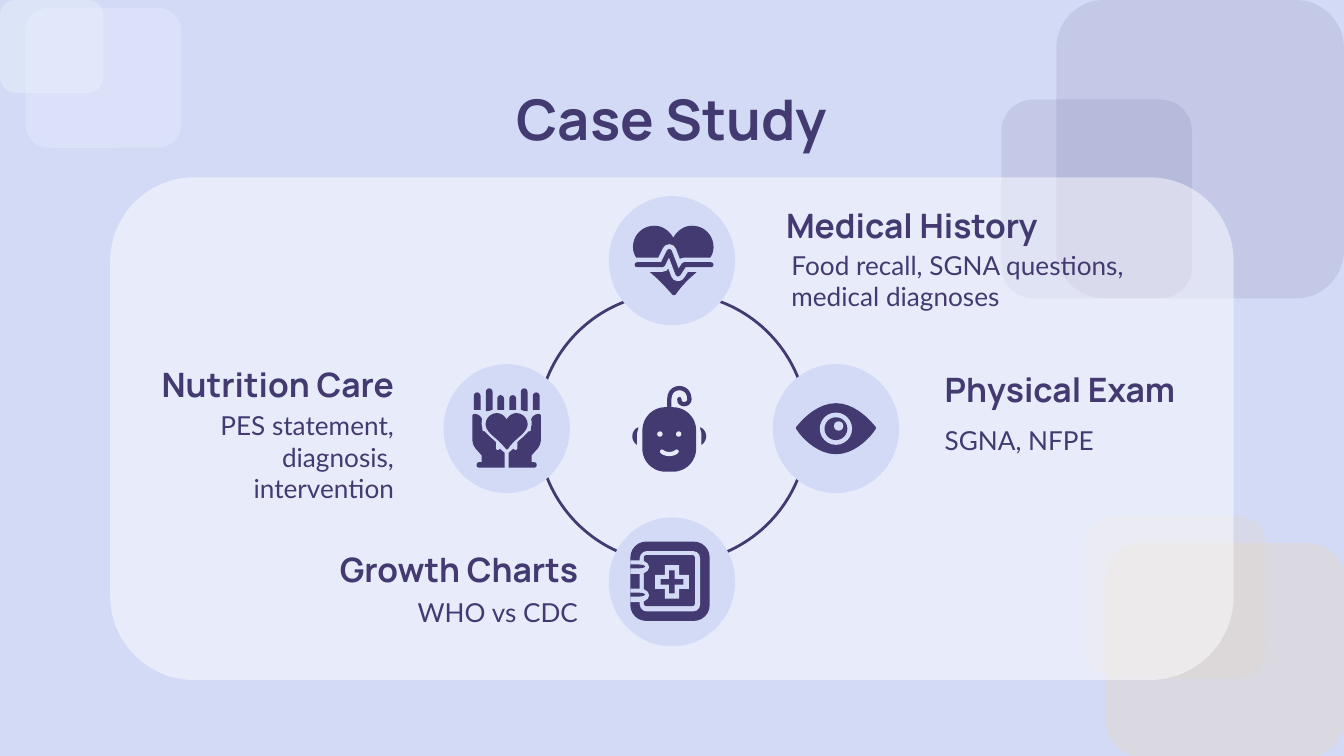
from lxml.etree import SubElement
from pptx import Presentation
from pptx.dml.color import RGBColor
from pptx.enum.shapes import MSO_SHAPE
from pptx.enum.text import MSO_ANCHOR, PP_ALIGN
from pptx.oxml.ns import qn
from pptx.util import Inches, Pt

PURPLE = RGBColor(0x42, 0x3A, 0x70)
PERIWINKLE = RGBColor(0xD3, 0xDA, 0xF6)
ICE = RGBColor(0xE8, 0xF0, 0xFC)
SAND = RGBColor(0xE4, 0xD7, 0xC2)
WHITE = RGBColor(0xFF, 0xFF, 0xFF)
PANEL_TINT = RGBColor(0xE8, 0xEB, 0xFA)


def add_filled(shapes, preset, left, top, width, height, color, opacity=100, corner=None):
    shape = shapes.add_shape(preset, Inches(left), Inches(top), Inches(width), Inches(height))
    shape.shadow.inherit = False
    shape.fill.solid()
    shape.fill.fore_color.rgb = color
    shape.line.fill.background()
    if corner is not None:
        shape.adjustments[0] = corner
    if opacity < 100:
        clr = shape.fill._xPr.find(qn("a:solidFill"))[0]
        SubElement(clr, qn("a:alpha"), val=str(opacity * 1000))
    return shape


def flatten(steps, parts=10):
    """Turn (x, y) lines and (x1, y1, x2, y2, x, y) curves into points."""
    points = [steps[0]]
    for step in steps[1:]:
        if len(step) == 2:
            points.append(step)
            continue
        p0, p1, p2, p3 = points[-1], step[:2], step[2:4], step[4:]
        for i in range(1, parts + 1):
            t = i / parts
            u = 1 - t
            points.append(tuple(u**3 * a + 3 * u * u * t * b + 3 * u * t * t * c + t**3 * d
                                for a, b, c, d in zip(p0, p1, p2, p3)))
    return points


def add_path(shapes, cx, cy, steps, color, stroke=None, scale=1, side=1):
    """Draw steps, in hundredths of an inch from the centre, filled or as a stroke."""
    points = [(Inches(cx + side * scale * x / 100), Inches(cy + scale * y / 100))
              for x, y in flatten(steps)]
    builder = shapes.build_freeform(*points[0])
    builder.add_line_segments(points[1:], close=stroke is None)
    shape = builder.convert_to_shape()
    shape.shadow.inherit = False
    if stroke is None:
        shape.fill.solid()
        shape.fill.fore_color.rgb = color
        shape.line.fill.background()
    else:
        shape.fill.background()
        shape.line.color.rgb = color
        shape.line.width = Pt(stroke)
        outline = shape.line._get_or_add_ln()
        outline.set("cap", "rnd")
        SubElement(outline, qn("a:round"))


def add_heart(shapes, cx, cy, color=PURPLE, scale=1):
    add_path(shapes, cx, cy, [
        (0, -17), (-2, -21, -7, -26, -14, -26), (-23, -26, -30, -19, -30, -10),
        (-30, -4, -26, 1, -18, 8), (-11, 14, -6, 19, -1, 25), (0, 26, 1, 26, 2, 25),
        (6, 19, 11, 14, 18, 8), (26, 1, 30, -4, 30, -10),
        (30, -19, 23, -26, 14, -26), (7, -26, 2, -21, 0, -17)], color, scale=scale)


def draw_heartbeat(shapes, cx, cy):
    add_heart(shapes, cx + 0.01, cy)
    pulse = [(-26, 3), (-7, 3), (-2, -7), (4.5, 10), (9, 3), (29, 3)]
    add_path(shapes, cx, cy, pulse, PERIWINKLE, stroke=7.6)
    add_path(shapes, cx, cy, pulse, PURPLE, stroke=2.7)


def draw_eye(shapes, cx, cy):
    add_path(shapes, cx, cy, [
        (0, -19), (16, -19, 28, -3, 29, -2), (30, -1, 30, 0, 29, 1),
        (28, 3, 16, 19, 0, 19), (-16, 19, -28, 3, -29, 1),
        (-30, 0, -30, -1, -29, -2), (-28, -3, -16, -19, 0, -19)], PURPLE)
    for dx, dy, size, color in [(0, 0, 0.24, PERIWINKLE), (0, 0, 0.17, PURPLE),
                                (0.02, -0.02, 0.07, PERIWINKLE)]:
        add_filled(shapes, MSO_SHAPE.OVAL, cx + dx - size / 2, cy + dy - size / 2,
                   size, size, color)


def draw_caring_hands(shapes, cx, cy):
    hand = [(-24.5, -11), (-21, -11, -18, -9, -18, -5), (-18, 1), (-18, 2, -17, 2, -16, 2),
            (-11, 3, -8, 7, -8, 11), (-8, 15), (-7, 16.5, -6, 16, -5, 15), (-1.5, 18),
            (-1.5, 29), (-20.5, 29), (-23, 29, -23, 25, -20.5, 25), (-18.5, 25),
            (-18.5, 20), (-22, 16), (-25, 13, -25.5, 10, -25.5, 7), (-25.5, -10)]
    for side in (1, -1):
        add_path(shapes, cx, cy, hand, PURPLE, side=side)
        for offset, top, height in [(0.22, -0.27, 0.13), (0.13, -0.3, 0.17),
                                    (0.045, -0.25, 0.11)]:
            add_filled(shapes, MSO_SHAPE.ROUND_2_SAME_RECTANGLE, cx - side * offset - 0.025,
                       cy + top, 0.05, height, PURPLE, corner=0.5)
    add_heart(shapes, cx, cy + 0.02, PERIWINKLE, scale=0.62)
    add_heart(shapes, cx, cy + 0.02, scale=0.52)


def draw_health_book(shapes, cx, cy):
    left, top = cx - 0.31, cy - 0.3
    for inset, size, color, corner in [(0, 0.59, PURPLE, 0.2), (0.07, 0.45, PERIWINKLE, 0.12),
                                       (0.1, 0.38, PURPLE, 0.05)]:
        add_filled(shapes, MSO_SHAPE.ROUNDED_RECTANGLE, left + inset, top + inset,
                   size, size, color, corner=corner)
    for clasp in (0.14, 0.35):
        add_filled(shapes, MSO_SHAPE.FLOWCHART_DELAY, left, top + clasp, 0.14, 0.1, PERIWINKLE)
        add_filled(shapes, MSO_SHAPE.FLOWCHART_DELAY, left, top + clasp + 0.03, 0.11, 0.03, PURPLE)
    for size, color, corner in [(0.25, PERIWINKLE, 0.29), (0.17, PURPLE, 0.38)]:
        add_filled(shapes, MSO_SHAPE.CROSS, cx - size / 2, cy - size / 2,
                   size, size, color, corner=corner)


def draw_baby(shapes, cx, cy):
    add_filled(shapes, MSO_SHAPE.ROUNDED_RECTANGLE, cx - 0.2, cy - 0.16, 0.4, 0.48,
               PURPLE, corner=0.43)
    add_path(shapes, cx, cy, [
        (0, -14), (0, -22), (0, -33, 15, -33, 15, -22), (15, -17, 7, -17, 7.5, -22)],
        PURPLE, stroke=2.3)
    for side in (1, -1):
        add_path(shapes, cx, cy, [
            (-23, -1), (-26, 0, -27.5, 3, -27.5, 6), (-27.5, 8, -26, 11, -24, 12),
            (-24, 4), (-24, 2, -23, 1, -23, -1)], PURPLE, side=side)
        add_filled(shapes, MSO_SHAPE.OVAL, cx + side * 0.07 - 0.02, cy + 0.02, 0.04, 0.04,
                   PANEL_TINT)
    add_path(shapes, cx, cy, [(-5.5, 17), (-3, 19.5, 3, 19.5, 5.5, 17)], PANEL_TINT, stroke=2.2)


def add_text(shapes, left, top, width, height, lines, font, size, align, anchor, bold=False):
    frame = shapes.add_textbox(Inches(left), Inches(top), Inches(width), Inches(height)).text_frame
    frame.word_wrap = True
    frame.vertical_anchor = anchor
    frame.margin_left = frame.margin_right = Inches(0.1)
    frame.margin_top = frame.margin_bottom = Inches(0.1)
    frame.text = lines
    for paragraph in frame.paragraphs:
        paragraph.alignment = align
        paragraph.font.name = font
        paragraph.font.size = Pt(size)
        paragraph.font.bold = bold
        paragraph.font.color.rgb = PURPLE


def add_topic(shapes, heading, heading_box, detail, detail_box, align):
    add_text(shapes, *heading_box, heading, "Manrope", 18, align, MSO_ANCHOR.MIDDLE, bold=True)
    add_text(shapes, *detail_box, detail, "Lato", 14, align, MSO_ANCHOR.BOTTOM)


def add_backdrop(shapes):
    for *box, color, opacity in [
            (0, 0, 0.77, 0.69, ICE, 47), (0.19, 0.06, 1.16, 1.04, ICE, 35),
            (7.86, 0, 2.14, 2.22, PURPLE, 10), (7.45, 0.74, 1.42, 1.48, PURPLE, 10),
            (8.23, 4.04, 1.77, 1.59, SAND, 42), (8.08, 3.84, 1.34, 1.2, SAND, 24),
            (0.82, 1.32, 8.36, 3.74, WHITE, 49)]:
        add_filled(shapes, MSO_SHAPE.ROUNDED_RECTANGLE, *box, color, opacity, corner=0.167)


def add_cycle(shapes, cx, cy):
    """Draw the ring around the baby with an icon disc on each side."""
    ring = add_filled(shapes, MSO_SHAPE.OVAL, cx - 1, cy - 1.01, 2.01, 2.01, PURPLE)
    ring.fill.background()
    ring.line.color.rgb = PURPLE
    ring.line.width = Pt(1.5)
    for dx, dy, draw_icon in [(0, -1.25, draw_heartbeat), (1.22, 0, draw_eye),
                              (0, 1.14, draw_health_book), (-1.23, 0, draw_caring_hands)]:
        x, y = cx + dx, cy + dy
        add_filled(shapes, MSO_SHAPE.OVAL, x - 0.47, y - 0.48, 0.94, 0.96, PERIWINKLE)
        draw_icon(shapes, x, y)
    draw_baby(shapes, cx - 0.02, cy)


def build_case_study(slide):
    slide.background.fill.solid()
    slide.background.fill.fore_color.rgb = PERIWINKLE
    shapes = slide.shapes
    add_backdrop(shapes)
    add_text(shapes, 0.77, 0.58, 8.46, 0.59, "Case Study", "Manrope", 30,
             PP_ALIGN.CENTER, MSO_ANCHOR.MIDDLE, bold=True)
    add_cycle(shapes, 5, 3.19)
    add_topic(shapes, "Medical History", (5.75, 1.54, 2.32, 0.27),
              "Food recall, SGNA questions,\nmedical diagnoses", (5.79, 1.86, 2.78, 0.56),
              PP_ALIGN.LEFT)
    add_topic(shapes, "Physical Exam", (6.93, 2.76, 2.18, 0.27),
              "SGNA, NFPE", (6.93, 3.11, 2.32, 0.38), PP_ALIGN.LEFT)
    add_topic(shapes, "Growth Charts", (2.08, 4.1, 2.32, 0.27),
              "WHO vs CDC", (2.66, 4.37, 1.74, 0.4), PP_ALIGN.RIGHT)
    add_topic(shapes, "Nutrition Care", (0.94, 2.72, 2.09, 0.27),
              "PES statement, diagnosis, intervention", (1.29, 3.07, 1.74, 0.78), PP_ALIGN.RIGHT)


def main():
    deck = Presentation()
    deck.slide_width = Inches(10)
    deck.slide_height = deck.slide_width * 9 // 16
    build_case_study(deck.slides.add_slide(deck.slide_layouts[6]))
    deck.save("out.pptx")


if __name__ == "__main__":
    main()
